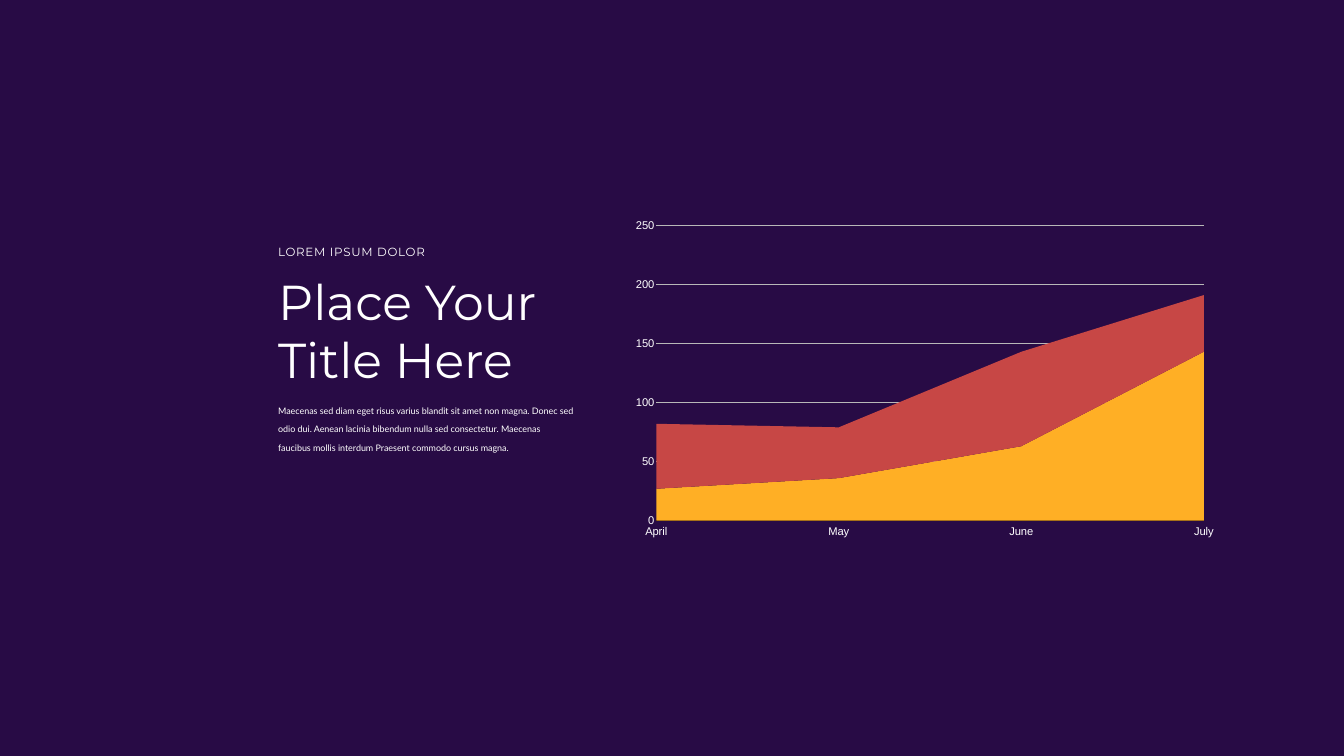
from lxml import etree
from pptx import Presentation
from pptx import util as u
from pptx.chart.data import CategoryChartData
from pptx.dml.color import RGBColor
from pptx.enum import chart as c, shapes, text
from pptx.oxml.ns import qn

PURPLE = RGBColor(0x28, 0x0B, 0x45)
WHITE = RGBColor(0xFF, 0xFF, 0xFF)
BLACK = RGBColor(0, 0, 0)
GREY = RGBColor(0xB8, 0xB8, 0xB8)
AMBER = RGBColor(0xFF, 0xAF, 0x25)
RED = RGBColor(0xC7, 0x47, 0x45)

# Content
SLIDE_SIZE = (26.67, 15)
TEXT_LEFT, TEXT_INSET = 5.46, 0.06
# wording, top, width, height, font, size, space before, character attributes
TEXTS = [
    ("Maecenas sed diam eget risus varius blandit sit amet non magna. "
     "Donec sed odio dui. Aenean lacinia bibendum nulla sed consectetur. "
     "Maecenas faucibus mollis interdum Praesent commodo cursus magna.",
     7.9, 5.99, 2.2, "Lato", 22, 45, {"baseline": "14000"}),
    ("Place Your Title Here", 5.32, 7.06, 2.51, "Montserrat", 70, 0, {}),
    ("LOREM IPSUM DOLOR", 4.79, 6.56, 0.4, "Montserrat", 16.9, 0, {"spc": "100"}),
]
CHART_BOX = (12.44, 4.23, 11.66, 6.54)
PLOT_AREA = {"x": 0.05, "y": 0.037, "w": 0.932, "h": 0.896}
MONTHS = ["April", "May", "June", "July"]
SERIES = [
    ("Series 1", (27, 36, 63, 143), AMBER),
    ("Series 2", (55, 43, 80, 48), RED),
]


def add_text(slide, wording, top, width, height, font, size, space_before, attributes):
    box = slide.shapes.add_textbox(
        *map(u.Inches, (TEXT_LEFT, top, width, height)))
    frame = box.text_frame
    frame.word_wrap = True
    frame.auto_size = text.MSO_AUTO_SIZE.NONE
    frame.margin_left = frame.margin_right = u.Inches(TEXT_INSET)
    frame.margin_top = frame.margin_bottom = u.Inches(TEXT_INSET)
    paragraph = frame.paragraphs[0]
    paragraph.space_before = u.Pt(space_before)
    run = paragraph.add_run()
    run.text = wording
    paragraph.font.name = run.font.name = font
    paragraph.font.size = run.font.size = u.Pt(size)
    paragraph.font.color.rgb = run.font.color.rgb = WHITE
    for name, value in attributes.items():
        run.font._element.set(name, value)


def set_plot_area(chart):
    """Fix the inner plot area as fractions of the chart."""
    plot_area = chart._chartSpace.find(".//" + qn("c:plotArea"))
    layout = plot_area.find(qn("c:layout"))
    if layout is None:
        layout = etree.Element(qn("c:layout"))
        plot_area.insert(0, layout)
    manual = etree.SubElement(layout, qn("c:manualLayout"))
    settings = {"layoutTarget": "inner", "xMode": "edge", "yMode": "edge", **PLOT_AREA}
    for name, value in settings.items():
        etree.SubElement(manual, qn("c:" + name)).set("val", str(value))


def add_area_chart(slide):
    data = CategoryChartData()
    data.categories = MONTHS
    for name, values, _ in SERIES:
        data.add_series(name, values)
    chart = slide.shapes.add_chart(
        c.XL_CHART_TYPE.AREA_STACKED, *map(u.Inches, CHART_BOX), data).chart
    chart.has_legend = False
    chart.has_title = False
    chart.font.name = "Montserrat"
    chart.font.size = u.Pt(10)
    chart.font.color.rgb = BLACK
    chart.plots[0].vary_by_categories = False
    for series, (_, _, color) in zip(chart.plots[0].series, SERIES):
        series.format.fill.solid()
        series.format.fill.fore_color.rgb = color
        series.format.line.fill.background()

    # Axes
    months, values = chart.category_axis, chart.value_axis
    for axis in (months, values):
        axis.major_tick_mark = axis.minor_tick_mark = c.XL_TICK_MARK.NONE
        font = axis.tick_labels.font
        font.name, font.size, font.color.rgb = "Arial", u.Pt(16), WHITE
    months.has_major_gridlines = False
    months.tick_label_position = c.XL_TICK_LABEL_POSITION.LOW
    months.format.line.color.rgb = BLACK
    months.format.line.width = u.Pt(1)
    values.minimum_scale, values.maximum_scale, values.major_unit = 0, 250, 50
    values.format.line.fill.background()
    values.has_major_gridlines = True
    values.major_gridlines.format.line.color.rgb = GREY
    values.major_gridlines.format.line.width = u.Pt(1)
    values._element.find(qn("c:crossBetween")).set("val", "midCat")
    set_plot_area(chart)


def main():
    presentation = Presentation()
    presentation.slide_width, presentation.slide_height = map(u.Inches, SLIDE_SIZE)
    slide = presentation.slides.add_slide(presentation.slide_layouts[6])

    # Backdrop
    backdrop = slide.shapes.add_shape(
        shapes.MSO_SHAPE.RECTANGLE, 0, 0, *map(u.Inches, SLIDE_SIZE))
    backdrop.shadow.inherit = False
    backdrop.fill.solid()
    backdrop.fill.fore_color.rgb = PURPLE
    backdrop.line.fill.background()

    # Chart and text column
    add_area_chart(slide)
    for item in TEXTS:
        add_text(slide, *item)

    presentation.save("out.pptx")


if __name__ == "__main__":
    main()
